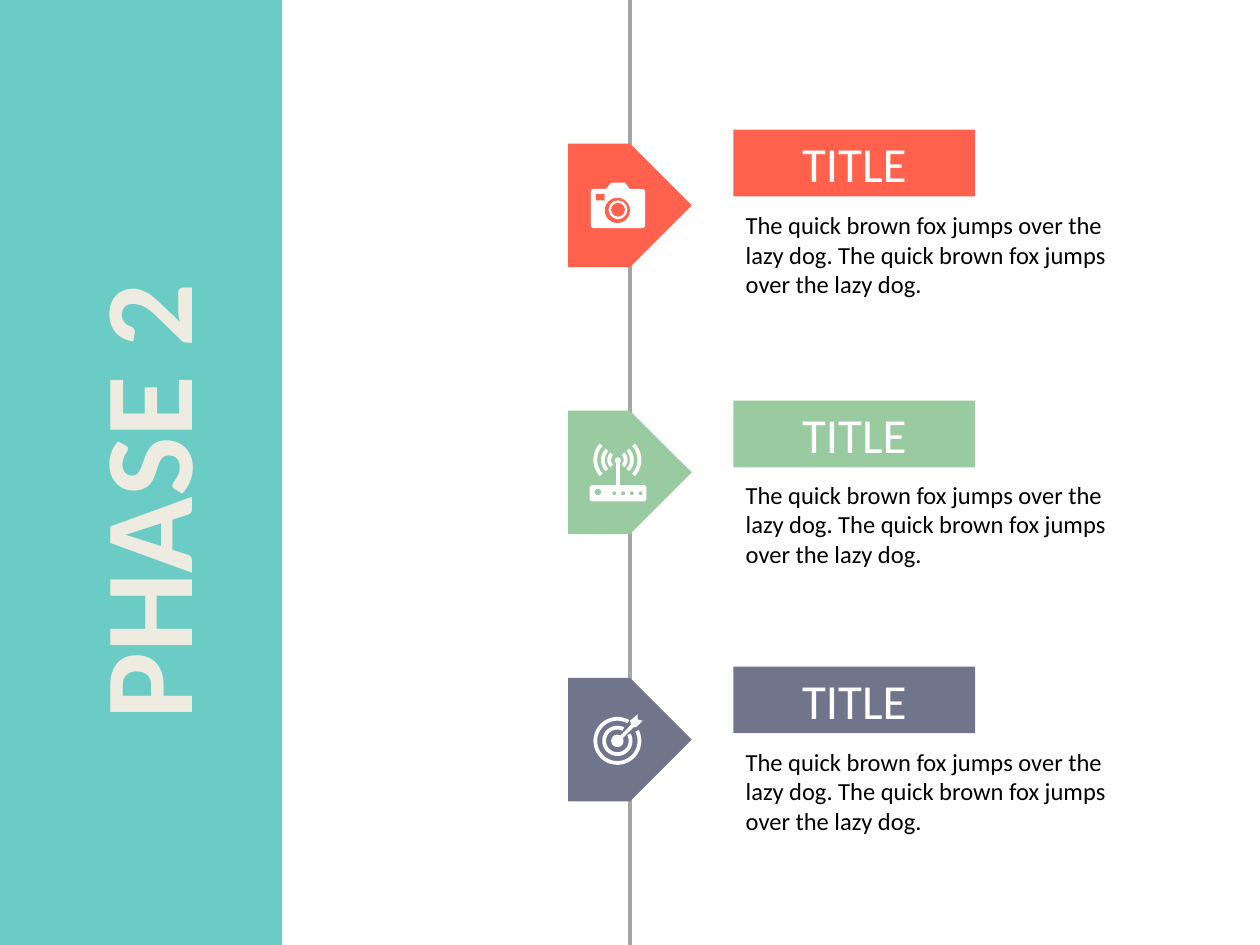
"""Build the Phase 2 timeline slide with three titled steps."""
import math
import pptx
import pptx.util
import pptx.dml.color
import pptx.enum.shapes
import pptx.enum.text
import lxml.etree

Inches, Pt = pptx.util.Inches, pptx.util.Pt
RGBColor = pptx.dml.color.RGBColor
KIND = pptx.enum.shapes.MSO_SHAPE
ALIGN = pptx.enum.text.PP_ALIGN
ANCHOR = pptx.enum.text.MSO_ANCHOR

TEAL = RGBColor(0x6B, 0xCB, 0xC5)
CREAM = RGBColor(0xEE, 0xEC, 0xE1)
GREY = RGBColor(0xA6, 0xA6, 0xA6)
CORAL = RGBColor(0xFF, 0x61, 0x4C)
GREEN = RGBColor(0x9A, 0xCA, 0x9F)
SLATE = RGBColor(0x70, 0x75, 0x8C)
WHITE = RGBColor(0xFF, 0xFF, 0xFF)
BLACK = RGBColor(0, 0, 0)
BODY = "The quick brown fox jumps over the lazy dog. The quick brown fox jumps over the lazy dog."

deck = pptx.Presentation()
deck.slide_width, deck.slide_height = Inches(10), Inches(7.5)
slide = deck.slides.add_slide(deck.slide_layouts[6])
shapes = slide.shapes


def draw(pool, kind, left, top, width, height, color):
    shape = pool.add_shape(kind, Inches(left), Inches(top), Inches(width), Inches(height))
    shape.shadow.inherit = False
    shape.fill.solid()
    shape.fill.fore_color.rgb = color
    shape.line.fill.background()
    return shape


def write(shape, text, size, color, align):
    frame = shape.text_frame
    frame.word_wrap = True
    para = frame.paragraphs[0]
    para.text = text
    para.alignment = align
    para.font.name = "Calibri"
    para.font.size = Pt(size)
    para.font.color.rgb = color
    return frame


draw(shapes, KIND.RECTANGLE, 0, 0, 2.24, 7.5, TEAL)
phase = shapes.add_textbox(Inches(0.14), Inches(1.68), Inches(1.97), Inches(4.13))
phase.rotation = 180
frame = write(phase, "PHASE 2", 72, CREAM, ALIGN.CENTER)
frame.paragraphs[0].font.bold = True
frame.vertical_anchor = ANCHOR.MIDDLE
phase.element.txBody.bodyPr.set("vert", "eaVert")

spine = shapes.add_connector(pptx.enum.shapes.MSO_CONNECTOR.STRAIGHT,
                             Inches(5), Inches(7.5), Inches(5), Inches(0))
spine.line.color.rgb = GREY
spine.line.width = Pt(2)
lxml.etree.SubElement(spine.element.spPr, pptx.oxml.ns.qn("a:effectLst"))

steps = [(CORAL, 1.03, 1.62), (GREEN, 3.18, 3.76), (SLATE, 5.29, 5.88)]
for row, (color, top, below) in enumerate(steps):
    draw(shapes, KIND.PENTAGON, 4.51, 1.14 + 2.12 * row, 0.98, 0.98, color)
    body = shapes.add_textbox(Inches(5.82), Inches(below), Inches(3.1), Inches(0.81))
    frame = write(body, BODY, 14, BLACK, ALIGN.LEFT)
    frame.auto_size = pptx.enum.text.MSO_AUTO_SIZE.SHAPE_TO_FIT_TEXT
    title = draw(shapes, KIND.RECTANGLE, 5.82, top, 1.92, 0.53, color)
    frame = write(title, "TITLE", 28, WHITE, ALIGN.CENTER)
    frame.vertical_anchor = ANCHOR.MIDDLE

camera, router, target = [shapes.add_group_shape().shapes for step in steps]

parts = [
    (camera, KIND.ROUNDED_RECTANGLE, 4.69, 1.5, 0.43, 0.31, WHITE),
    (camera, KIND.RECTANGLE, 4.73, 1.54, 0.07, 0.05, CORAL),
    (camera, KIND.OVAL, 4.8, 1.57, 0.2, 0.2, CORAL),
    (camera, KIND.OVAL, 4.83, 1.59, 0.15, 0.15, WHITE),
    (camera, KIND.OVAL, 4.85, 1.61, 0.11, 0.11, CORAL),
    (router, KIND.ROUNDED_RECTANGLE, 4.68, 3.85, 0.45, 0.13, WHITE),
    (router, KIND.RECTANGLE, 4.89, 3.66, 0.03, 0.19, WHITE),
    (router, KIND.OVAL, 4.88, 3.63, 0.05, 0.05, WHITE),
    (router, KIND.OVAL, 4.72, 3.88, 0.05, 0.05, GREEN),
    (target, KIND.OVAL, 4.85, 5.83, 0.1, 0.1, WHITE),
]
parts += [(router, KIND.OVAL, 4.86 + 0.07 * spot, 3.9, 0.03, 0.03, GREEN) for spot in range(4)]
for part in parts:
    shape = draw(*part)
    if part[1] == KIND.ROUNDED_RECTANGLE:
        shape.adjustments[0] = 0.02 / part[5]

hump = [(4.81, 1.5), (4.85, 1.45), (4.96, 1.45), (5, 1.5)]
dart = [(4.89, 5.87), (5.01, 5.75), (5, 5.72), (5.06, 5.67), (5.06, 5.71),
        (5.1, 5.72), (5.05, 5.77), (5.03, 5.77), (4.91, 5.89)]
forms = [(camera, hump), (target, dart)]

bands = [(target, 5.88, 0.19, 0.16, -27, 300), (target, 5.88, 0.12, 0.09, -29, 297)]
for outer, inner, half in ((0.19, 0.16, 43), (0.13, 0.1, 44), (0.08, 0.05, 47)):
    for turn in (0, 180):
        bands.append((router, 3.65, outer, inner, turn - half, turn + half))
for pool, level, outer, inner, start, end in bands:
    count = 48
    angles = [math.radians(start + (end - start) * step / count) for step in range(count + 1)]
    rim = [(outer, angle) for angle in angles] + [(inner, angle) for angle in reversed(angles)]
    forms.append((pool, [(4.9 + reach * math.cos(angle), level + reach * math.sin(angle))
                         for reach, angle in rim]))

for pool, points in forms:
    spots = [(Inches(left), Inches(top)) for left, top in points]
    pen = pool.build_freeform(*spots[0])
    pen.add_line_segments(spots[1:], close=True)
    shape = pen.convert_to_shape()
    shape.shadow.inherit = False
    shape.fill.solid()
    shape.fill.fore_color.rgb = WHITE
    shape.line.fill.background()

deck.save("out.pptx")
